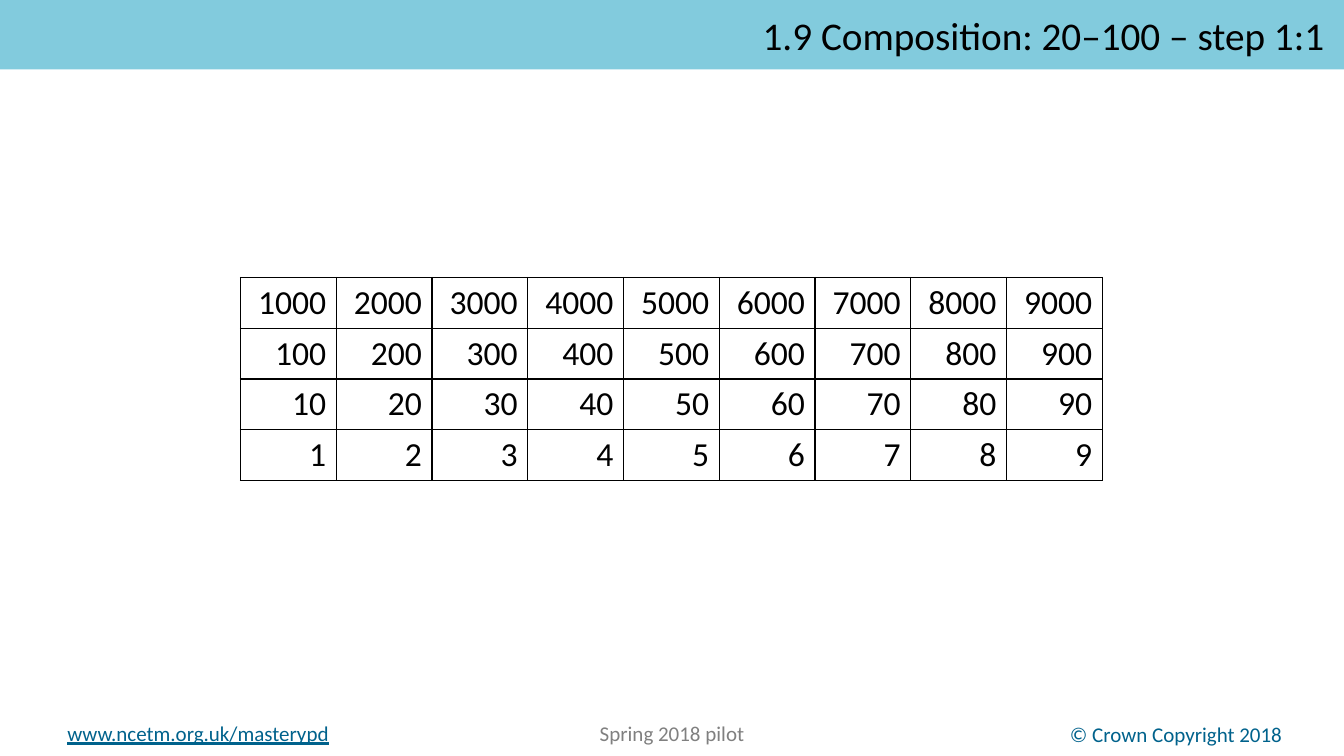
from lxml.etree import SubElement
from pptx import Presentation
from pptx.dml.color import RGBColor
from pptx.enum.shapes import MSO_SHAPE
from pptx.enum.text import MSO_ANCHOR, PP_ALIGN
from pptx.oxml.ns import qn
from pptx.util import Cm, Pt

FONT = "Calibri"
COLOURS = {
    "banner": "82CBDD",
    "text": "000000",
    "border": "000000",
    "footer": "00628C",
    "pilot": "808080",
}


def colour(name):
    return RGBColor.from_string(COLOURS[name])


def write_text(text_frame, text, size, colour_name, alignment, underline=None):
    paragraph = text_frame.paragraphs[0]
    paragraph.alignment = alignment
    run = paragraph.add_run()
    run.text = text
    run.font.name = FONT
    run.font.size = Pt(size)
    run.font.underline = underline
    run.font.color.rgb = colour(colour_name)


def add_banner(slide, width, title):
    shape = slide.shapes.add_shape(MSO_SHAPE.RECTANGLE, 0, 0, width, Cm(1.75))
    shape.shadow.inherit = False
    shape.fill.solid()
    shape.fill.fore_color.rgb = colour("banner")
    shape.line.fill.background()
    text_frame = shape.text_frame
    text_frame.word_wrap = True
    text_frame.vertical_anchor = MSO_ANCHOR.MIDDLE
    text_frame.margin_left = text_frame.margin_right = Cm(0.5)
    write_text(text_frame, title, 28, "text", PP_ALIGN.RIGHT)


def add_footer(slide, left, top, text, colour_name, alignment, underline=None):
    shape = slide.shapes.add_textbox(Cm(left), Cm(top), Cm(10.41), Cm(0.89))
    shape.text_frame.word_wrap = True
    write_text(shape.text_frame, text, 15, colour_name, alignment, underline)


def add_borders(cell):
    properties = cell._tc.get_or_add_tcPr()
    for position, side in enumerate(("a:lnL", "a:lnR", "a:lnT", "a:lnB")):
        line = SubElement(properties, qn(side), w=str(Pt(1)))
        fill = SubElement(line, qn("a:solidFill"))
        SubElement(fill, qn("a:srgbClr"), val=COLOURS["border"])
        properties.insert(position, line)


def add_place_value_chart(slide, multipliers, digits):
    frame = slide.shapes.add_table(len(multipliers), len(digits),
                                   Cm(6.06), Cm(6.99), Cm(21.72), Cm(5.12))
    table = frame.table
    table.first_row = False
    table.horz_banding = False
    for row, multiplier in enumerate(multipliers):
        for column, digit in enumerate(digits):
            cell = table.cell(row, column)
            cell.fill.background()
            add_borders(cell)
            write_text(cell.text_frame, str(digit * multiplier), 24, "text",
                       PP_ALIGN.RIGHT)


def main():
    presentation = Presentation()
    presentation.slide_width = Cm(33.87)
    presentation.slide_height = Cm(19.05)
    slide = presentation.slides.add_slide(presentation.slide_layouts[6])

    # Footer
    add_footer(slide, 1.45, 18.03, "www.ncetm.org.uk/masterypd", "footer",
               PP_ALIGN.LEFT, underline=True)
    add_footer(slide, 22.15, 18.06, "© Crown Copyright 2018", "footer",
               PP_ALIGN.RIGHT)
    add_footer(slide, 11.73, 18.03, "Spring 2018 pilot", "pilot",
               PP_ALIGN.CENTER)

    # Title banner
    add_banner(slide, presentation.slide_width,
               "1.9 Composition: 20–100 – step 1:1")

    # Thousands, hundreds, tens and ones
    add_place_value_chart(slide, (1000, 100, 10, 1), range(1, 10))

    presentation.save("out.pptx")


if __name__ == "__main__":
    main()
